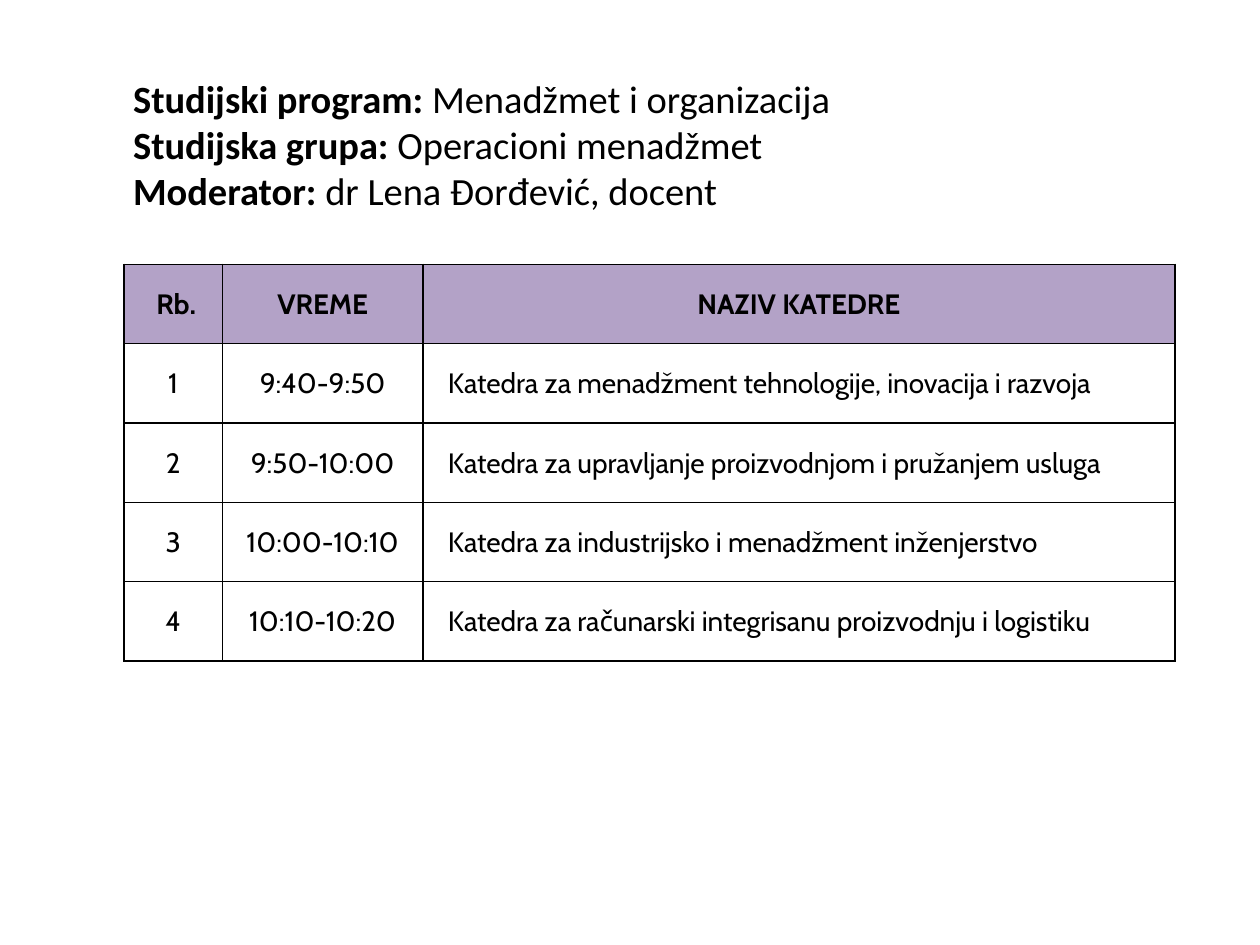
from pptx import Presentation
from pptx.dml.color import RGBColor
from pptx.enum.text import MSO_ANCHOR, PP_ALIGN
from pptx.oxml.ns import qn
from pptx.util import Pt
from lxml.etree import SubElement

BLACK = RGBColor(0x00, 0x00, 0x00)
LILAC = RGBColor(0xB3, 0xA2, 0xC7)

HEADING = [
    ("Studijski program: ", "Menadžmet i organizacija"),
    ("Studijska grupa: ", "Operacioni menadžmet"),
    ("Moderator: ", "dr Lena Đorđević, docent"),
]
SCHEDULE = [
    (" Rb.", "VREME", "NAZIV KATEDRE"),
    ("1", "9:40-9:50", "Katedra za menadžment tehnologije, inovacija i razvoja"),
    ("2", "9:50-10:00", "Katedra za upravljanje proizvodnjom i pružanjem usluga"),
    ("3", "10:00-10:10", "Katedra za industrijsko i menadžment inženjerstvo"),
    ("4", "10:10-10:20", "Katedra za računarski integrisanu proizvodnju i logistiku"),
]
COLUMN_WIDTHS = (56.3, 114.5, 429.9)
ROW_HEIGHT = 45.36


def add_text(paragraph, text, font="Calibri", size=22, color=BLACK, bold=False):
    run = paragraph.add_run()
    run.text = text
    run.font.name = font
    run.font.size = Pt(size)
    run.font.bold = bold
    run.font.color.rgb = color


class SlideBuilder:
    """Holds the table style and the current slide."""

    font = "Cabin"
    size = 16
    border_width = 1
    inset = 0.7
    name_indent = 13.7

    def __init__(self, slide):
        self.slide = slide

    def heading(self, lines, left, top, width, height):
        frame = self.slide.shapes.add_textbox(
            Pt(left), Pt(top), Pt(width), Pt(height)).text_frame
        frame.word_wrap = True
        frame.vertical_anchor = MSO_ANCHOR.MIDDLE
        paragraph = frame.paragraphs[0]
        for index, (label, value) in enumerate(lines):
            if index:
                paragraph.add_line_break()
            add_text(paragraph, label, bold=True)
            add_text(paragraph, value)

    def borders(self, cell):
        properties = cell._tc.get_or_add_tcPr()
        for side in ("a:lnL", "a:lnR", "a:lnT", "a:lnB"):
            line = SubElement(properties, qn(side), w=str(Pt(self.border_width)))
            fill = SubElement(line, qn("a:solidFill"))
            SubElement(fill, qn("a:srgbClr"), val=str(BLACK))

    def cell(self, cell, text, header, centered):
        self.borders(cell)
        if header:
            cell.fill.solid()
            cell.fill.fore_color.rgb = LILAC
        else:
            cell.fill.background()
        cell.vertical_anchor = MSO_ANCHOR.MIDDLE
        cell.margin_left = cell.margin_right = cell.margin_top = Pt(self.inset)
        cell.margin_bottom = 0
        paragraph = cell.text_frame.paragraphs[0]
        if centered:
            paragraph.alignment = PP_ALIGN.CENTER
        else:
            paragraph.alignment = PP_ALIGN.LEFT
            paragraph._p.get_or_add_pPr().set("marL", str(Pt(self.name_indent)))
        add_text(paragraph, text, font=self.font, size=self.size, bold=header)

    def table(self, rows, widths, row_height, left, top):
        table = self.slide.shapes.add_table(
            len(rows), len(widths), Pt(left), Pt(top),
            Pt(sum(widths)), Pt(row_height * len(rows))).table
        for column, width in zip(table.columns, widths):
            column.width = Pt(width)
        for row_index, texts in enumerate(rows):
            table.rows[row_index].height = Pt(row_height)
            header = row_index == 0
            for column_index, text in enumerate(texts):
                centered = header or column_index < len(widths) - 1
                self.cell(table.cell(row_index, column_index), text, header, centered)


def main():
    presentation = Presentation()
    presentation.slide_width, presentation.slide_height = Pt(720), Pt(540)
    slide = presentation.slides.add_slide(presentation.slide_layouts[6])
    builder = SlideBuilder(slide)

    # Programme, group and moderator
    builder.heading(HEADING, left=69, top=37.5, width=648, height=90)

    # Schedule of departments
    builder.table(SCHEDULE, COLUMN_WIDTHS, ROW_HEIGHT, left=70.8, top=151)

    presentation.save("out.pptx")


if __name__ == "__main__":
    main()
